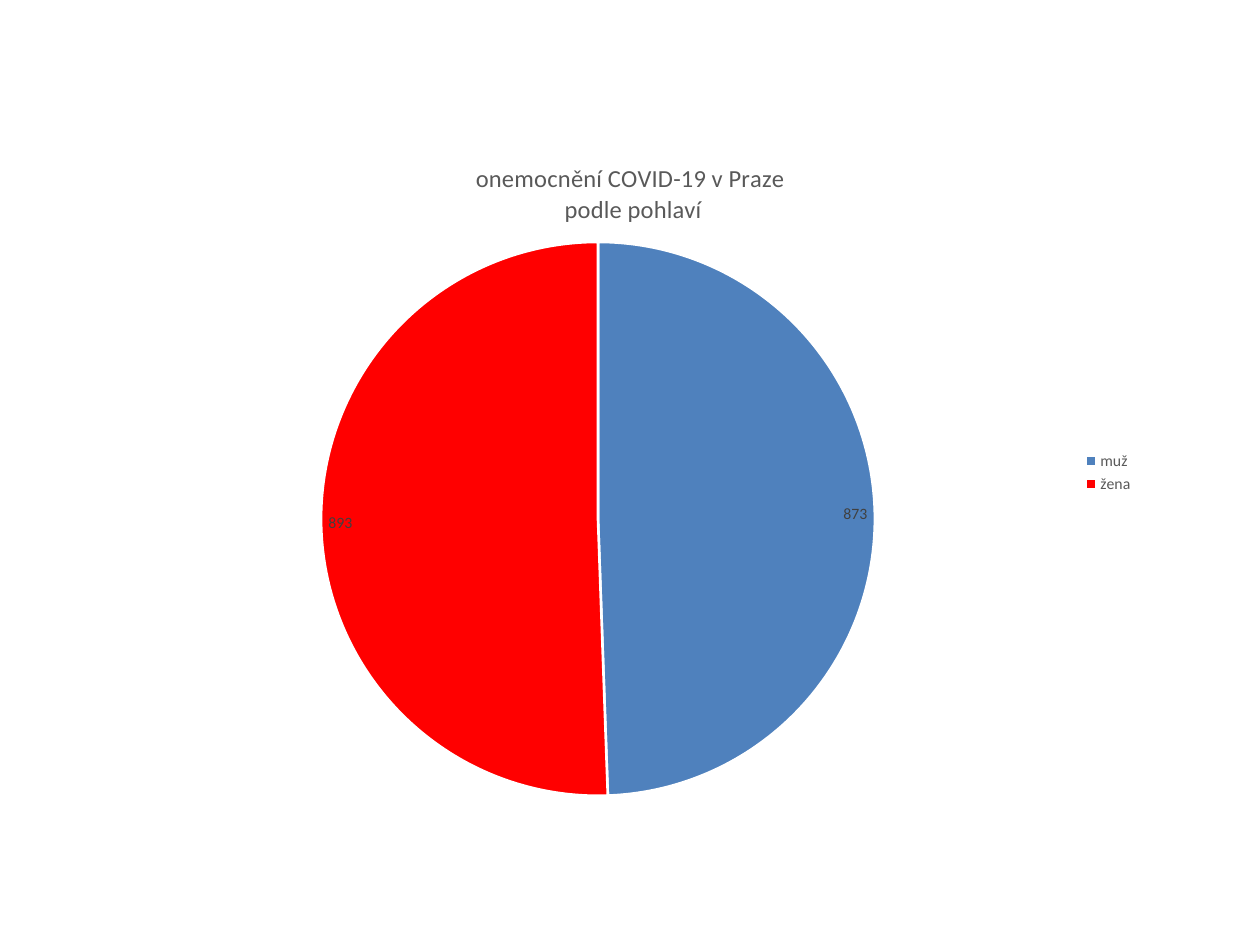
"""Build a slide with a pie chart of COVID-19 cases in Prague by sex."""
from dataclasses import dataclass

from lxml.etree import SubElement
from pptx import Presentation
from pptx.chart.data import CategoryChartData
from pptx.dml.color import RGBColor
from pptx.enum.chart import XL_CHART_TYPE, XL_LABEL_POSITION, XL_LEGEND_POSITION
from pptx.oxml.ns import qn
from pptx.util import Emu, Pt

TITLE_LINES = ["onemocnění COVID-19 v Praze ", "podle pohlaví"]
CASES = [("muž", 873, "4F81BD"), ("žena", 893, "FF0000")]
SERIES_NAME = "Series 1"

SLIDE_SIZE = (1260, 945)
CHART_BOX = (113, 131, 1033, 683)
PIE_BOX = (321, 242, 554, 554)
TITLE_POSITION = (472, 158)


@dataclass(frozen=True)
class Theme:
    font: str = "Calibri"
    title_size: int = 14
    base_size: int = 10
    small_size: int = 9
    black: str = "000000"
    muted: str = "595959"
    label: str = "404040"
    white: str = "FFFFFF"
    border_width: float = 1.5


THEME = Theme()


def px(length):
    return Emu(length * 914400 // 126)


def style_font(font, size, color):
    font.name = THEME.font
    font.size = Pt(size)
    font.bold = False
    font.color.rgb = RGBColor.from_string(color)


def place(element, index, box):
    """Set the manual layout of a chart part from a box in slide px."""
    for old_layout in element.findall(qn("c:layout")):
        element.remove(old_layout)
    layout = SubElement(element, qn("c:layout"))
    element.insert(index, layout)
    manual = SubElement(layout, qn("c:manualLayout"))
    left, top, width, height = CHART_BOX
    fractions = [(box[0] - left) / width, (box[1] - top) / height]
    if len(box) == 4:
        SubElement(manual, qn("c:layoutTarget")).set("val", "inner")
        fractions += [box[2] / width, box[3] / height]
    for tag in ("xMode", "yMode"):
        SubElement(manual, qn(f"c:{tag}")).set("val", "edge")
    for tag, fraction in zip("xywh", fractions):
        SubElement(manual, qn(f"c:{tag}")).set("val", f"{fraction:.4f}")


def add_title(chart):
    chart.has_title = True
    title = chart.chart_title
    title.include_in_layout = False
    frame = title.text_frame
    for index, line in enumerate(TITLE_LINES):
        paragraph = frame.add_paragraph() if index else frame.paragraphs[0]
        run = paragraph.add_run()
        run.text = line
        style_font(run.font, THEME.title_size, THEME.muted)
    place(title._element, 1, TITLE_POSITION)


def add_legend(chart):
    chart.has_legend = True
    chart.legend.position = XL_LEGEND_POSITION.RIGHT
    chart.legend.include_in_layout = False
    style_font(chart.legend.font, THEME.small_size, THEME.muted)


def style_pie(chart):
    plot = chart.plots[0]
    plot.vary_by_categories = True
    for index, (_, _, color) in enumerate(CASES):
        point_format = plot.series[0].points[index].format
        point_format.fill.solid()
        point_format.fill.fore_color.rgb = RGBColor.from_string(color)
        point_format.line.color.rgb = RGBColor.from_string(THEME.white)
        point_format.line.width = Pt(THEME.border_width)
    labels = plot.series[0].data_labels
    labels.show_value = True
    labels.position = XL_LABEL_POSITION.INSIDE_END
    style_font(labels.font, THEME.small_size, THEME.label)
    place(chart._chartSpace.chart.plotArea, 0, PIE_BOX)


def main():
    presentation = Presentation()
    presentation.slide_width, presentation.slide_height = map(px, SLIDE_SIZE)
    slide = presentation.slides.add_slide(presentation.slide_layouts[6])
    data = CategoryChartData()
    data.categories = [name for name, _, _ in CASES]
    data.add_series(SERIES_NAME, [count for _, count, _ in CASES])
    chart = slide.shapes.add_chart(
        XL_CHART_TYPE.PIE, *map(px, CHART_BOX), data
    ).chart
    style_font(chart.font, THEME.base_size, THEME.black)
    add_title(chart)
    add_legend(chart)
    style_pie(chart)
    presentation.save("out.pptx")


if __name__ == "__main__":
    main()
